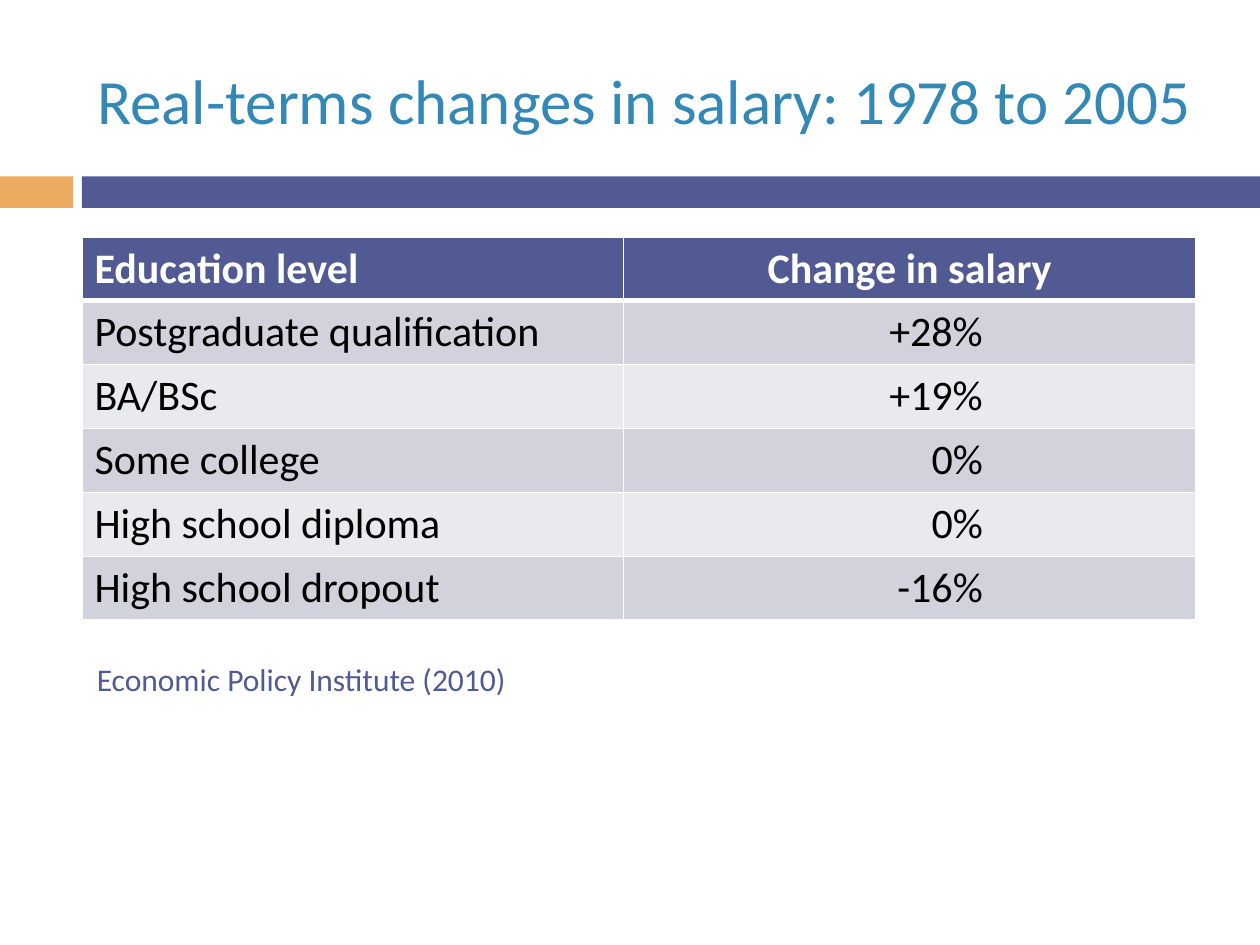
from pptx import Presentation
from pptx.dml.color import RGBColor
from pptx.enum.shapes import MSO_SHAPE
from pptx.enum.text import MSO_ANCHOR, PP_ALIGN
from pptx.oxml import parse_xml
from pptx.oxml.ns import nsdecls
from pptx.util import Inches, Pt

NAVY, ORANGE, BLUE = "525A93", "EDAA61", "3488B6"
WHITE, BLACK = "FFFFFF", "000000"
BANDS = ["D1D2DC", "E9EAEE"]
ROWS = [
    ("Education level", "Change in salary"),
    ("Postgraduate qualification", "+28%"),
    ("BA/BSc", "+19%"),
    ("Some college", "0%"),
    ("High school diploma", "0%"),
    ("High school dropout", "-16%"),
]


def paint(target, color):
    target.solid()
    target.fore_color.rgb = RGBColor.from_string(color)


def write(frame, text, size, color, bold=False, align=PP_ALIGN.LEFT):
    para = frame.paragraphs[0]
    para.text = text
    para.alignment = align
    font = para.font
    font.name, font.size, font.bold = "Calibri", Pt(size), bold
    font.color.rgb = RGBColor.from_string(color)


def add_title(slide, left, top, width, height):
    title = slide.shapes.title
    title.left, title.top = Inches(left), Inches(top)
    title.width, title.height = Inches(width), Inches(height)
    title.text_frame.vertical_anchor = MSO_ANCHOR.MIDDLE
    write(title.text_frame, "Real-terms changes in salary: 1978 to 2005", 36, BLUE)


def add_band(slide, left, top, width, height):
    # Short orange block, a gap, then the long navy bar
    block, start = 0.58, 0.65
    for x, w, color in [(0, block, ORANGE), (start, width - start, NAVY)]:
        bar = slide.shapes.add_shape(
            MSO_SHAPE.RECTANGLE, Inches(left + x), Inches(top), Inches(w), Inches(height))
        bar.shadow.inherit = False
        paint(bar.fill, color)
        bar.line.fill.background()


def add_borders(cell, bottom):
    props = cell._tc.get_or_add_tcPr()
    sides = [("lnL", 1), ("lnR", 1), ("lnT", 1), ("lnB", bottom)]
    for spot, (side, width) in enumerate(sides):
        props.insert(spot, parse_xml(
            f'<a:{side} {nsdecls("a")} w="{Pt(width)}"><a:solidFill>'
            f'<a:srgbClr val="{WHITE}"/></a:solidFill></a:{side}>'))


def add_grid(slide, left, top, width, height):
    table = slide.shapes.add_table(
        len(ROWS), 2, Inches(left), Inches(top), Inches(width), Inches(height)).table
    first = 4.3
    table.columns[0].width = Inches(first)
    table.columns[1].width = Inches(width - first)
    for r, row in enumerate(ROWS):
        head = r == 0
        for c, text in enumerate(row):
            cell = table.cell(r, c)
            paint(cell.fill, NAVY if head else BANDS[(r - 1) % 2])
            align = PP_ALIGN.LEFT
            if c == 1:
                align = PP_ALIGN.CENTER if head else PP_ALIGN.RIGHT
                if not head:
                    cell.margin_right = Inches(1.69)
            write(cell.text_frame, text, 24, WHITE if head else BLACK, head, align)
            # The header rule is heavier, on both cells that share it
            add_borders(cell, 3 if head else 1)
            if r == 1:
                cell._tc.tcPr[2].set("w", str(Pt(3)))


def add_source(slide, left, top, width, height):
    box = slide.shapes.add_textbox(Inches(left), Inches(top), Inches(width), Inches(height))
    box.text_frame.word_wrap = True
    write(box.text_frame, "Economic Policy Institute (2010)", 18, NAVY)


def main():
    deck = Presentation()
    deck.slide_width, deck.slide_height = Inches(10), Inches(7.5)
    slide = deck.slides.add_slide(deck.slide_layouts[5])
    add_band(slide, 0, 1.4, 10, 0.25)
    add_title(slide, 0.67, 0.25, 8.92, 1.08)
    add_grid(slide, 0.65, 1.88, 8.84, 3)
    add_source(slide, 0.67, 5.19, 4.6, 0.4)
    deck.save("out.pptx")


if __name__ == "__main__":
    main()
